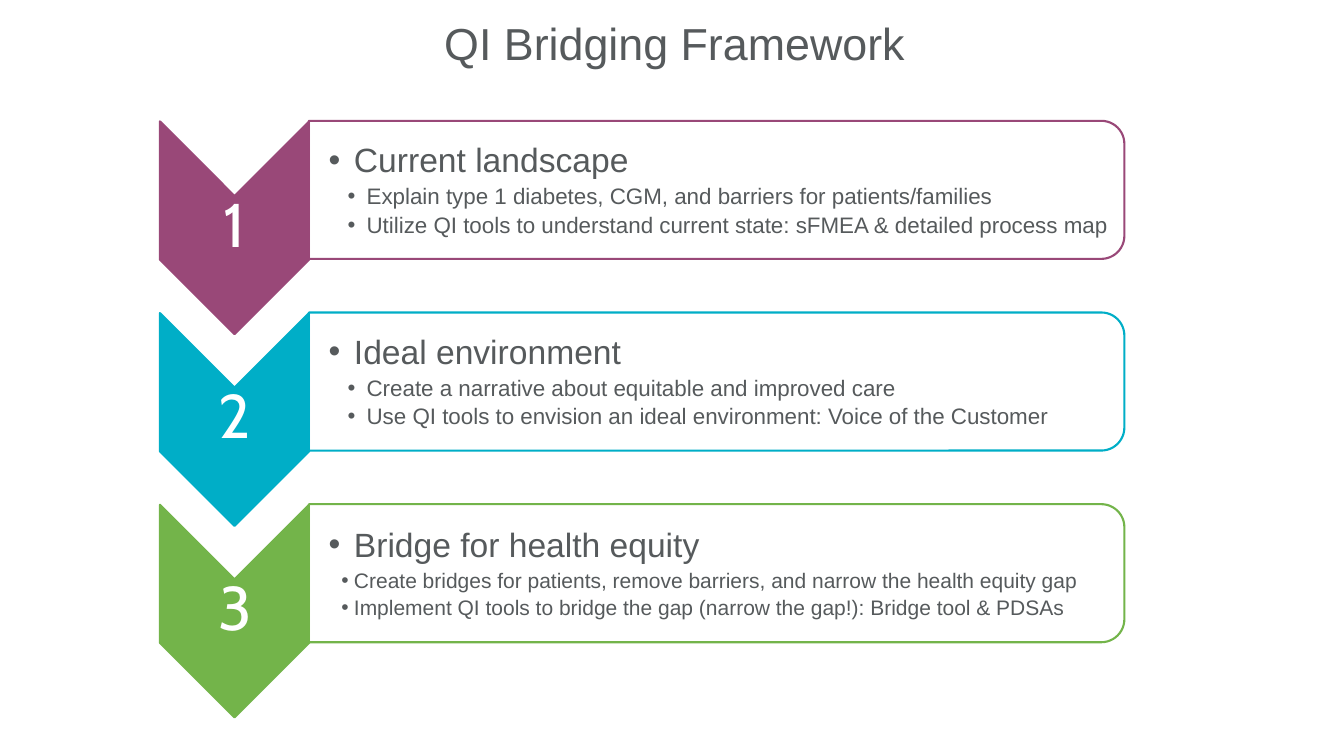
from lxml import etree
from pptx import Presentation
from pptx.dml.color import RGBColor
from pptx.enum.shapes import MSO_SHAPE
from pptx.enum.text import MSO_ANCHOR, MSO_AUTO_SIZE, PP_ALIGN
from pptx.oxml.ns import qn
from pptx.util import Cm, Pt

CHEVRON = MSO_SHAPE.CHEVRON
ROUND_TOP = MSO_SHAPE.ROUND_2_SAME_RECTANGLE
TOP, MIDDLE = MSO_ANCHOR.TOP, MSO_ANCHOR.MIDDLE
CENTER, LEFT = PP_ALIGN.CENTER, PP_ALIGN.LEFT
NO_AUTOFIT = MSO_AUTO_SIZE.NONE

COLORS = {
    "text": "565A5C",
    "white": "FFFFFF",
    "plum": "994878",
    "teal": "00AEC7",
    "green": "73B44A",
}
STEP_PITCH = 4.83
STEPS = [
    ("plum", "Current landscape", 16, 0.96, 0.48, [
        "Explain type 1 diabetes, CGM, and barriers for patients/families",
        "Utilize QI tools to understand current state: sFMEA & detailed process map",
    ]),
    ("teal", "Ideal environment", 16, 0.96, 0.48, [
        "Create a narrative about equitable and improved care",
        "Use QI tools to envision an ideal environment: Voice of the Customer",
    ]),
    ("green", "Bridge for health equity", 15, 0.64, 0.32, [
        "Create bridges for patients, remove barriers, and narrow the health equity gap",
        "Implement QI tools to bridge the gap (narrow the gap!): Bridge tool & PDSAs",
    ]),
]


def rgb(name):
    return RGBColor.from_string(COLORS[name])


def place(sp, left, top, width, height):
    sp.left, sp.top = Cm(left), Cm(top)
    sp.width, sp.height = Cm(width), Cm(height)


def setup_frame(tf, anchor, left=0.25, other=0.13):
    tf.word_wrap = True
    tf.auto_size = NO_AUTOFIT
    tf.vertical_anchor = anchor
    tf.margin_left = Cm(left)
    tf.margin_top = tf.margin_right = tf.margin_bottom = Cm(other)


def write(p, text, size, font="Arial", color="text", align=LEFT, after=0):
    p.alignment = align
    p.line_spacing = 0.9
    p.space_before = Pt(0)
    p.space_after = Pt(after)
    r = p.add_run()
    r.text = text
    r.font.name = font
    r.font.size = Pt(size)
    r.font.bold = False
    r.font.color.rgb = rgb(color)


def add_bullet(p, margin, hanging):
    pPr = p._p.get_or_add_pPr()
    pPr.set("marL", str(Cm(margin)))
    pPr.set("indent", str(-Cm(hanging)))
    etree.SubElement(pPr, qn("a:buFont"), typeface="Arial")
    etree.SubElement(pPr, qn("a:buChar"), char="•")


def add_turned_shape(s, kind, at, fill, line):
    sp = s.shapes.add_shape(kind, *(Cm(v) for v in at))
    sp.rotation = 90
    sp.shadow.inherit = False
    sp.fill.solid()
    sp.fill.fore_color.rgb = rgb(fill)
    sp.line.color.rgb = rgb(line)
    sp.line.width = Pt(1.5)
    return sp


def set_opacity(sp, percent):
    clr = sp.element.spPr.find(qn("a:solidFill")).find(qn("a:srgbClr"))
    etree.SubElement(clr, qn("a:alpha"), val=str(percent * 1000))


def add_number(s, number, top):
    sp = s.shapes.add_textbox(Cm(4.04), Cm(top), Cm(3.76), Cm(1.6))
    setup_frame(sp.text_frame, MIDDLE, 0.08, 0.08)
    write(sp.text_frame.paragraphs[0], str(number), 44, "Cabin", "white", CENTER)


def fill_list(sp, top, heading, size, margin, hanging, items):
    place(sp, 7.8, top, 20.37, 3.15)
    tf = sp.text_frame
    setup_frame(tf, MIDDLE, 0.48, 0.05)
    p = tf.paragraphs[0]
    write(p, heading, 24, after=4)
    add_bullet(p, 0.64, 0.64)
    for item in items:
        p = tf.add_paragraph()
        p.level = 1
        write(p, item, size, after=3)
        add_bullet(p, margin, hanging)


def bring_to_front(sp):
    sp.element.getparent().append(sp.element)


def add_step(s, sp, index, color, *content):
    offset = index * STEP_PITCH
    add_turned_shape(s, CHEVRON, (3.23, 3.86 + offset, 5.36, 3.76), color, color)
    add_number(s, index + 1, 4.93 + offset)
    box = add_turned_shape(s, ROUND_TOP, (16.32, -5.49 + offset, 3.48, 20.55), "white", color)
    set_opacity(box, 90)
    fill_list(sp, 3.23 + offset, *content)
    bring_to_front(sp)


def add_title(s, text):
    sp = s.shapes.title
    place(sp, 2.34, 0.43, 29.21, 5.49)
    setup_frame(sp.text_frame, TOP)
    write(sp.text_frame.paragraphs[0], text, 32, align=CENTER)


def main():
    prs = Presentation()
    prs.slide_width, prs.slide_height = Cm(33.87), Cm(19.05)
    s = prs.slides.add_slide(prs.slide_layouts.get_by_name("Comparison"))
    add_title(s, "QI Bridging Framework")
    bodies = list(s.placeholders)[1:]
    for index, (sp, step) in enumerate(zip(bodies, STEPS)):
        add_step(s, sp, index, *step)
    for sp in bodies[len(STEPS):]:
        sp.element.getparent().remove(sp.element)
    prs.save("out.pptx")


if __name__ == "__main__":
    main()
